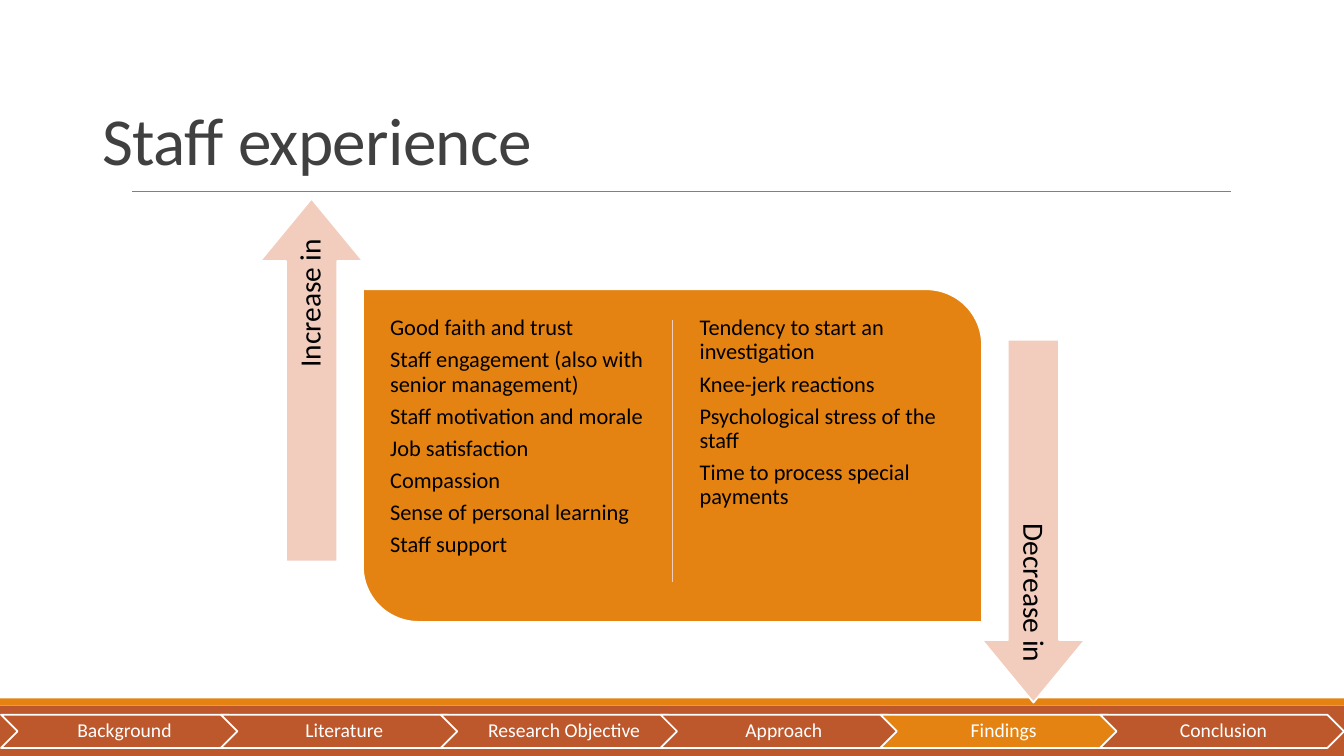
from lxml import etree
from pptx import Presentation
from pptx.dml.color import RGBColor
from pptx.enum.shapes import MSO_CONNECTOR, MSO_SHAPE
from pptx.enum.text import MSO_ANCHOR, PP_ALIGN
from pptx.oxml.ns import qn
from pptx.util import Inches, Pt

RECT = MSO_SHAPE.RECTANGLE
PANEL = MSO_SHAPE.ROUND_2_DIAG_RECTANGLE
ARROW = MSO_SHAPE.RIGHT_ARROW
CHEVRON = MSO_SHAPE.CHEVRON
STRAIGHT = MSO_CONNECTOR.STRAIGHT
TOP, MIDDLE, BOTTOM = MSO_ANCHOR.TOP, MSO_ANCHOR.MIDDLE, MSO_ANCHOR.BOTTOM
LEFT, CENTER, RIGHT = PP_ALIGN.LEFT, PP_ALIGN.CENTER, PP_ALIGN.RIGHT

TITLE = "Staff experience"
COLUMNS = [
    (3.8, ["Good faith and trust",
           "Staff engagement (also with senior management)",
           "Staff motivation and morale",
           "Job satisfaction",
           "Compassion",
           "Sense of personal learning",
           "Staff support"]),
    (6.87, ["Tendency to start an investigation",
            "Knee-jerk reactions",
            "Psychological stress of the staff",
            "Time to process special payments"]),
]
ARROWS = [
    ("Increase in", 270, (1.29, 3.26), (1.44, 3.67)),
    ("Decrease in", 90, (8.45, 4.66), (8.6, 4.76)),
]
STEPS = ["Background", "Literature", "Research Objective",
         "Approach", "Findings", "Conclusion"]
CURRENT_STEP = "Findings"
STEP_LEFT, STEP_PITCH, STEP_TOP, STEP_HEIGHT = 0.01, 2.18, 7.09, 0.33

FONT = "Calibri"
COLORS = {"orange": "E48312", "rust": "BD582C", "blush": "F2CDBD",
          "white": "FFFFFF", "black": "000000", "title": "404040",
          "rule": "808080"}


def rgb(name):
    return RGBColor.from_string(COLORS[name])


def add_block(s, kind, box, fill, outlined=True, adj=(), rotation=0):
    sp = s.shapes.add_shape(kind, *map(Inches, box))
    sp.shadow.inherit = False
    sp.rotation = rotation
    for i, value in enumerate(adj):
        sp.adjustments[i] = value
    sp.fill.solid()
    sp.fill.fore_color.rgb = rgb(fill)
    if outlined:
        sp.line.color.rgb = rgb("white")
        sp.line.width = Pt(1.25)
    else:
        sp.line.fill.background()


def add_line(s, ends, color, width):
    cx = s.shapes.add_connector(STRAIGHT, *map(Inches, ends))
    cx.line.color.rgb = rgb(color)
    cx.line.width = Pt(width)
    etree.SubElement(cx._element.spPr, qn("a:effectLst"))


def add_text(s, box, lines, size, color="black", align=LEFT, anchor=TOP,
             insets=(0.07,) * 4, spacing=0.9, after=0.35, rotation=0):
    sp = s.shapes.add_textbox(*map(Inches, box))
    sp.rotation = rotation
    tf = sp.text_frame
    tf.word_wrap = True
    tf.vertical_anchor = anchor
    (tf.margin_left, tf.margin_top,
     tf.margin_right, tf.margin_bottom) = map(Inches, insets)
    tf.text = "\n".join(lines)
    for p in tf.paragraphs:
        p.alignment = align
        p.line_spacing = spacing
        p.space_after = Pt(size * after)
        p.font.name = FONT
        p.font.size = Pt(size)
        p.font.color.rgb = rgb(color)
    return tf


def main():
    """Build the staff experience slide."""
    prs = Presentation()
    prs.slide_width, prs.slide_height = Inches(13.33), Inches(7.5)
    s = prs.slides.add_slide(prs.slide_layouts[6])

    add_block(s, RECT, (0, 7, 13.33, 0.5), "rust", outlined=False)
    add_block(s, RECT, (0, 6.93, 13.33, 0.07), "orange", outlined=False)
    add_line(s, (1.31, 1.9, 12.21, 1.9), "rule", 0.5)
    tf = add_text(s, (0.92, 0.38, 11.5, 1.45), [TITLE], 48, "title",
                  anchor=BOTTOM, insets=(0.1, 0.05, 0.1, 0.05),
                  spacing=0.85, after=0)
    tf.paragraphs[0].runs[0]._r.get_or_add_rPr().set("spc", "-50")

    add_block(s, PANEL, (3.6, 2.87, 6.14, 3.3), "orange", adj=(0, 0.167))
    add_line(s, (6.67, 3.17, 6.67, 5.77), "blush", 1.25)
    for left, lines in COLUMNS:
        add_text(s, (left, 3.07, 2.66, 2.8), lines, 16)

    for label, rotation, arrow_at, label_at in ARROWS:
        add_block(s, ARROW, (*arrow_at, 3.6, 1.02), "blush",
                  adj=(0.498, 0.607), rotation=rotation)
        add_text(s, (*label_at, 3.29, 0.51), [label], 21, align=RIGHT,
                 anchor=MIDDLE, insets=(0.09,) * 4, rotation=rotation)

    for i, step in enumerate(STEPS):
        left = STEP_LEFT + i * STEP_PITCH
        fill = "orange" if step == CURRENT_STEP else "rust"
        add_block(s, CHEVRON, (left, STEP_TOP, 2.42, STEP_HEIGHT), fill)
        add_text(s, (left + 0.16, STEP_TOP, 2.09, STEP_HEIGHT), [step], 14,
                 "white", CENTER, MIDDLE, insets=(0.06, 0.02, 0.02, 0.02))

    prs.save("out.pptx")


if __name__ == "__main__":
    main()
